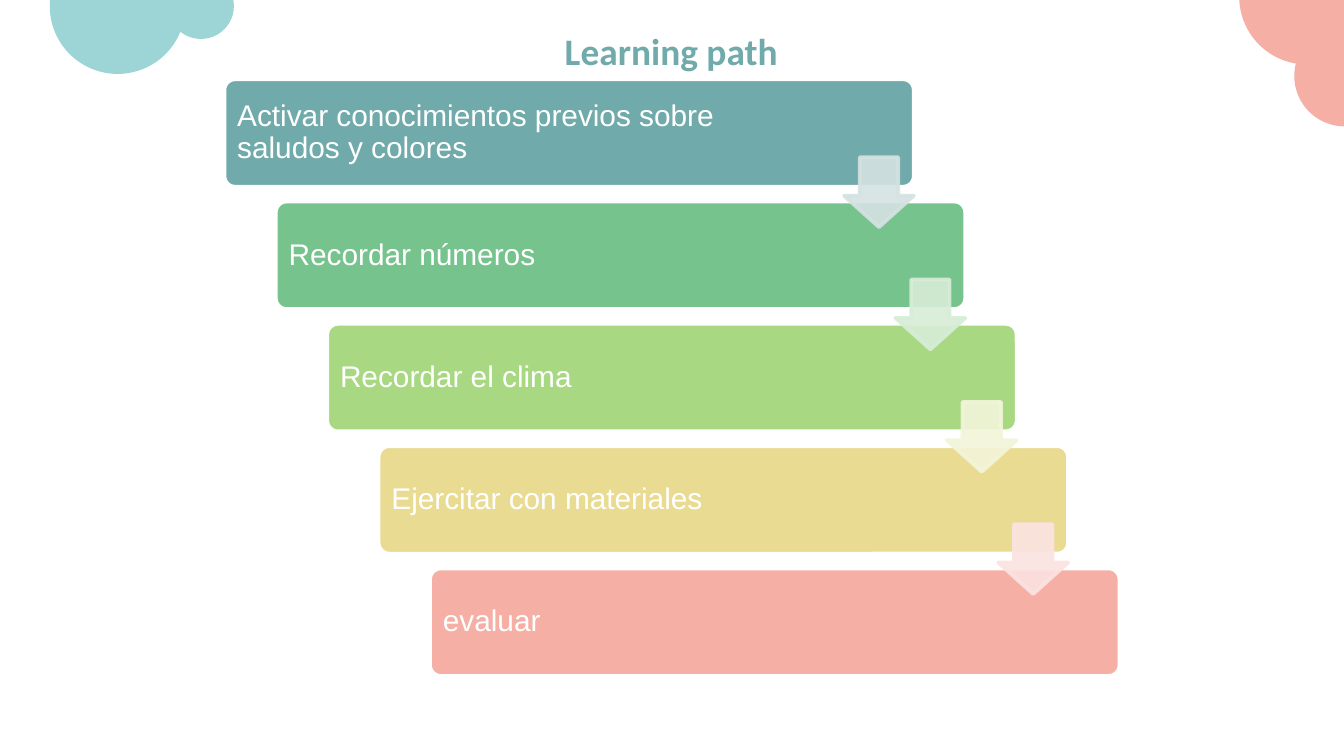
from typing import NamedTuple

from lxml.etree import SubElement
from pptx import Presentation
from pptx.dml.color import RGBColor
from pptx.enum.shapes import MSO_SHAPE as Preset
from pptx.enum.text import MSO_ANCHOR as Anchor, PP_ALIGN as Align
from pptx.oxml.ns import qn
from pptx.shapes.autoshape import Shape
from pptx.slide import Slide
from pptx.util import Inches, Pt

# Widescreen slide, 16:9
WIDTH = 10
HEIGHT = WIDTH * 9 / 16

WHITE = RGBColor(0xFF, 0xFF, 0xFF)
TEAL = RGBColor(0x71, 0xAA, 0xAA)
GREEN = RGBColor(0x77, 0xC3, 0x8D)
LIME = RGBColor(0xA8, 0xD8, 0x82)
YELLOW = RGBColor(0xE9, 0xDB, 0x91)
CORAL = RGBColor(0xF5, 0xAF, 0xA5)
AQUA = RGBColor(0x9D, 0xD4, 0xD6)
PALE_TEAL = RGBColor(0xD5, 0xE2, 0xE2)
PALE_GREEN = RGBColor(0xD7, 0xED, 0xD7)
PALE_YELLOW = RGBColor(0xF3, 0xF5, 0xDA)
PALE_CORAL = RGBColor(0xFB, 0xE3, 0xE1)

# Staircase grid, in inches: each step moves right and down by one cell
LEFT, TOP = 1.67, 0.59
LAST_LEFT, LAST_TOP = 3.2, 4.23
STEP_WIDTH, STEP_HEIGHT = 5.13, 0.8
LABEL_WIDTH, LABEL_HEIGHT = 4.18, 0.75
LABEL_INSET = (STEP_HEIGHT - LABEL_HEIGHT) / 2
ARROW_SIZE = 0.52
ARROW_DX, ARROW_DY = STEP_WIDTH - ARROW_SIZE, 0.58


class Box(NamedTuple):
    left: float
    top: float
    width: float
    height: float

    def emu(self) -> list[int]:
        return [Inches(length) for length in self]


class Circle(NamedTuple):
    left: float
    top: float
    diameter: float
    color: RGBColor


class Step(NamedTuple):
    label: str
    color: RGBColor
    arrow_color: RGBColor | None = None


CIRCLES = [
    Circle(9.63, 0.19, 0.75, CORAL),
    Circle(9.22, -0.53, 1.01, CORAL),
    Circle(0.37, -0.46, 1.01, AQUA),
    Circle(1.25, -0.2, 0.49, AQUA),
]

STEPS = [
    Step("Activar conocimientos previos sobre saludos y colores", TEAL, PALE_TEAL),
    Step("Recordar números", GREEN, PALE_GREEN),
    Step("Recordar el clima", LIME, PALE_YELLOW),
    Step("Ejercitar con materiales", YELLOW, PALE_CORAL),
    Step("evaluar", CORAL),
]

COLUMN = (LAST_LEFT - LEFT) / (len(STEPS) - 1)
ROW = (LAST_TOP - TOP) / (len(STEPS) - 1)


def add_preset(slide: Slide, preset: Preset, box: Box, fill: RGBColor,
               line: RGBColor | None = None) -> Shape:
    shape = slide.shapes.add_shape(preset, *box.emu())
    shape.shadow.inherit = False
    shape.fill.solid()
    shape.fill.fore_color.rgb = fill
    if line is None:
        shape.line.fill.background()
    else:
        shape.line.color.rgb = line
        shape.line.width = Pt(2)
    return shape


def add_text(slide: Slide, box: Box, text: str, font: str, size: int,
             color: RGBColor, inset: float, anchor: Anchor, align: Align,
             bold: bool = False, spacing: float = 1.0) -> None:
    frame = slide.shapes.add_textbox(*box.emu()).text_frame
    frame.word_wrap = True
    frame.vertical_anchor = anchor
    frame.margin_left = frame.margin_right = Inches(inset)
    frame.margin_top = frame.margin_bottom = Inches(inset)
    paragraph = frame.paragraphs[0]
    paragraph.text = text
    paragraph.alignment = align
    paragraph.line_spacing = spacing
    paragraph.font.name = font
    paragraph.font.size = Pt(size)
    paragraph.font.bold = bold
    paragraph.font.color.rgb = color


def set_opacity(shape: Shape, percent: int) -> None:
    """Apply one opacity to both the fill and the outline."""
    for color in shape._element.spPr.iter(qn("a:srgbClr")):
        SubElement(color, qn("a:alpha"), val=str(percent * 1000))


def add_step(slide: Slide, index: int, step: Step) -> None:
    left, top = LEFT + index * COLUMN, TOP + index * ROW
    bar = add_preset(slide, Preset.ROUNDED_RECTANGLE,
                     Box(left, top, STEP_WIDTH, STEP_HEIGHT), step.color, WHITE)
    bar.adjustments[0] = 0.1
    add_text(slide, Box(left + LABEL_INSET, top + LABEL_INSET, LABEL_WIDTH, LABEL_HEIGHT),
             step.label, "Arial", 16, WHITE, 0.07, Anchor.MIDDLE, Align.LEFT, spacing=0.9)


def add_arrow(slide: Slide, index: int, color: RGBColor) -> None:
    box = Box(LEFT + index * COLUMN + ARROW_DX, TOP + index * ROW + ARROW_DY,
              ARROW_SIZE, ARROW_SIZE)
    arrow = add_preset(slide, Preset.DOWN_ARROW, box, color, color)
    arrow.adjustments[0] = 0.55
    arrow.adjustments[1] = 0.45
    set_opacity(arrow, 90)


def main() -> None:
    deck = Presentation()
    deck.slide_width, deck.slide_height = Inches(WIDTH), Inches(HEIGHT)
    slide = deck.slides.add_slide(deck.slide_layouts[6])

    # Corner circles
    for circle in CIRCLES:
        add_preset(slide, Preset.OVAL,
                   Box(circle.left, circle.top, circle.diameter, circle.diameter),
                   circle.color)

    # Title
    add_text(slide, Box(0.65, 0.11, 8.69, 0.6), "Learning path", "Calibri", 20,
             TEAL, 0.1, Anchor.TOP, Align.CENTER, bold=True)

    # Staircase, then the arrows on top of it
    for index, step in enumerate(STEPS):
        add_step(slide, index, step)
    for index, step in enumerate(STEPS):
        if step.arrow_color is not None:
            add_arrow(slide, index, step.arrow_color)

    deck.save("out.pptx")


if __name__ == "__main__":
    main()
